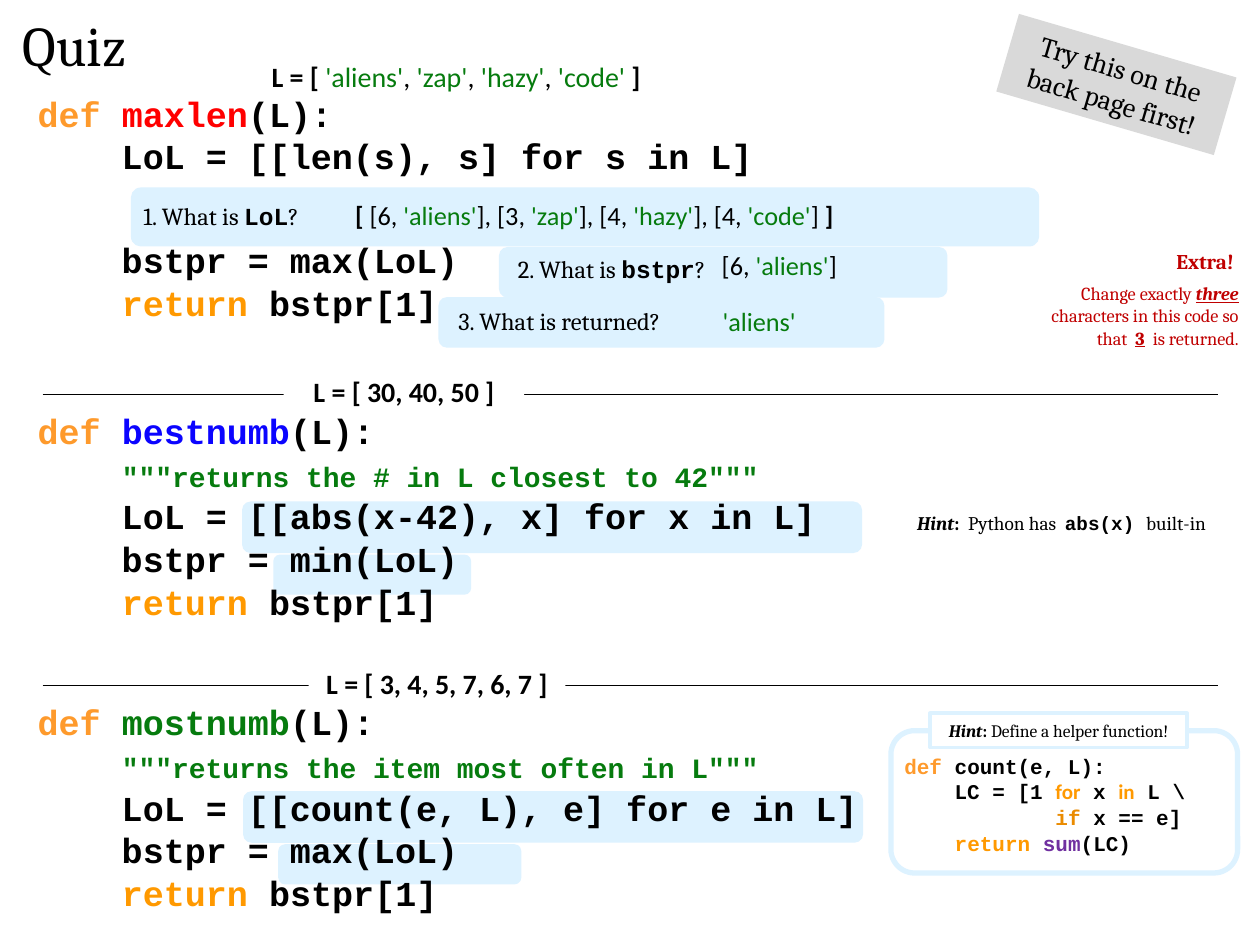
from lxml.etree import SubElement
from pptx import Presentation
from pptx.dml.color import RGBColor
from pptx.enum.shapes import MSO_CONNECTOR, MSO_SHAPE
from pptx.enum.text import MSO_ANCHOR, MSO_AUTO_SIZE, PP_ALIGN
from pptx.oxml.ns import qn
from pptx.util import Cm, Pt

BLACK, WHITE, PALE_BLUE, GRAY = "000000", "FFFFFF", "DDF2FF", "D9D9D9"
DEF_ORANGE, ORANGE, DARK_ORANGE = "FE9A2C", "FF9900", "EA8B00"
RED, BLUE, GREEN, PURPLE, CRIMSON = "FF0000", "0B04FF", "067B0E", "7030A0", "C00000"
SERIF, SANS, MONO = "Cambria", "Calibri", "Courier New"
LEFT, CENTER, RIGHT = PP_ALIGN.LEFT, PP_ALIGN.CENTER, PP_ALIGN.RIGHT


def rgb(color):
    return RGBColor.from_string(color)


def run(text, **style):
    return text, style


def add_run(paragraph, text, font=SERIF, size=16, color=BLACK, bold=False, italic=False, underline=False):
    piece = paragraph.add_run()
    piece.text = text
    piece.font.name = font
    piece.font.size = Pt(size)
    piece.font.color.rgb = rgb(color)
    piece.font.bold = bold
    piece.font.italic = italic
    piece.font.underline = underline


def set_relative_space_before(paragraph, percent):
    paragraph.space_before = Pt(0)
    spacing = paragraph._p.get_or_add_pPr().find(qn("a:spcBef"))
    for child in list(spacing):
        spacing.remove(child)
    SubElement(spacing, qn("a:spcPct")).set("val", str(percent * 1000))


def write_text(shape, lines, align=LEFT, line_spacing=1.0, before=50, wrap=True, **style):
    frame = shape.text_frame
    frame.word_wrap = wrap
    frame.auto_size = MSO_AUTO_SIZE.SHAPE_TO_FIT_TEXT
    for index, line in enumerate(lines):
        paragraph = frame.add_paragraph() if index else frame.paragraphs[0]
        paragraph.alignment = align
        paragraph.line_spacing = line_spacing
        set_relative_space_before(paragraph, before)
        for text, changes in line:
            add_run(paragraph, text, **{**style, **changes})
    return frame.paragraphs


def add_text(slide, box, lines, **style):
    shape = slide.shapes.add_textbox(*map(Cm, box))
    return write_text(shape, lines, **style)


def add_panel(slide, box, fill=None, line=None, line_width=1, kind=MSO_SHAPE.RECTANGLE):
    shape = slide.shapes.add_shape(kind, *map(Cm, box))
    shape.shadow.inherit = False
    if fill:
        shape.fill.solid()
        shape.fill.fore_color.rgb = rgb(fill)
    else:
        shape.fill.background()
    if line:
        shape.line.color.rgb = rgb(line)
        shape.line.width = Pt(line_width)
    else:
        shape.line.fill.background()
    return shape


def add_divider(slide, top, label, label_box):
    line = slide.shapes.add_connector(MSO_CONNECTOR.STRAIGHT, Cm(0.86), Cm(top), Cm(24.56), Cm(top))
    line.line.color.rgb = rgb(BLACK)
    line.line.width = Pt(0.75)
    SubElement(line._element.spPr, qn("a:effectLst"))
    panel = add_panel(slide, label_box, fill=WHITE)
    write_text(panel, [[run(label)]], align=CENTER, before=0, font=SANS, bold=True)


def quoted_runs(text):
    return [run(part, color=GREEN if "'" in part else BLACK) for part in split_quotes(text)]


def split_quotes(text):
    parts = text.split("'")
    quoted = [f"'{part}'" if index % 2 else part for index, part in enumerate(parts)]
    return [part for part in quoted if part]


def add_code(slide, box, name, color, body, docstring=None):
    lines = [[run("def ", color=DEF_ORANGE), run(name, color=color), run("(L):")]]
    if docstring:
        lines.append([run("    "), run(f'"""{docstring}"""', size=16, color=GREEN)])
    lines += [[run("    " + statement)] for statement in body]
    lines.append([run("    "), run("return ", color=ORANGE), run("bstpr[1]")])
    return add_text(slide, box, lines, line_spacing=0.6, font=MONO, size=20, bold=True)


def add_question(slide, box, pieces, wrap=False):
    add_text(slide, box, [pieces], line_spacing=0.6, wrap=wrap, size=14)


def add_answer(slide, box, pieces, align=CENTER):
    add_text(slide, box, [pieces], align=align, before=0, wrap=False, font=SANS, size=15)


def add_title(slide):
    title = slide.shapes.title
    title.left, title.top, title.width, title.height = map(Cm, (0.2, 0.08, 3.3, 1.63))
    title.text_frame.vertical_anchor = MSO_ANCHOR.TOP
    write_text(title, [[run("Quiz")]], size=32)


def add_highlights(slide):
    for box in [
        (4.9, 15.95, 12.5, 1.04), (5.61, 17.02, 4.9, 0.81),
        (4.88, 10.11, 12.5, 1.04), (5.51, 11.18, 3.99, 0.81),
        (8.84, 5.99, 8.99, 1.02), (10.06, 4.98, 9.04, 1.02),
        (2.64, 3.78, 18.31, 1.19),
    ]:
        add_panel(slide, box, fill=PALE_BLUE, kind=MSO_SHAPE.ROUNDED_RECTANGLE)


def add_maxlen(slide):
    code = add_code(slide, (0.51, 2.03, 17.98, 4.9), "maxlen", RED,
                    ["LoL = [[len(s), s] for s in L]", "bstpr = max(LoL)"])
    code[2].space_before = Pt(45)
    words = quoted_runs("'aliens', 'zap', 'hazy', 'code'")
    add_text(slide, (5.18, 1.07, 8.03, 0.94),
             [[run("L = [ ", bold=True), *words, run(" ]", bold=True)]],
             align=CENTER, before=0, font=SANS)
    add_question(slide, (2.64, 4.14, 3.99, 0.61),
                 [run("1. What is "), run("LoL", font=MONO, bold=True), run("?")], wrap=True)
    add_question(slide, (10.19, 5.21, 4.42, 0.61),
                 [run("2. What is "), run("bstpr", font=MONO, bold=True), run("?")])
    add_question(slide, (8.99, 6.25, 4.83, 0.61), [run("3. What is returned?")])
    pairs = quoted_runs("[6, 'aliens'], [3, 'zap'], [4, 'hazy'], [4, 'code'] ")
    add_answer(slide, (6.86, 3.89, 10.24, 0.89),
               [run("[ ", bold=True), *pairs, run("]", bold=True)])
    add_answer(slide, (14.3, 4.9, 2.87, 0.89), quoted_runs("[6, 'aliens']"), align=LEFT)
    add_answer(slide, (14.3, 6.02, 2.01, 0.89), quoted_runs("'aliens'"))
    add_text(slide, (20.75, 4.88, 4.47, 2.34), [
        [run("Extra! ", size=12, bold=True)],
        [run("Change exactly "), run("three", bold=True, italic=True, underline=True),
         run(" characters in this code so that  "), run("3", bold=True, underline=True),
         run("  is returned.")],
    ], align=RIGHT, size=10.5, color=CRIMSON)


def add_bestnumb(slide):
    add_code(slide, (0.51, 8.43, 22.96, 4.52), "bestnumb", BLUE,
             ["LoL = [[abs(x-42), x] for x in L]", "bstpr = min(LoL)"],
             docstring="returns the # in L closest to 42")
    add_text(slide, (18.11, 10.19, 6.58, 0.74), [[
        run("Hint", bold=True, italic=True), run(":", bold=True), run("  Python has  "),
        run("abs(x) ", font=MONO, bold=True), run("built-in"),
    ]], align=CENTER, size=11)


def add_mostnumb(slide):
    add_code(slide, (0.51, 14.3, 20.62, 4.52), "mostnumb", GREEN,
             ["LoL = [[count(e, L), e] for e in L]", "bstpr = max(LoL)"],
             docstring="returns the item most often in L")
    add_panel(slide, (17.96, 14.73, 6.99, 2.87), line=PALE_BLUE, line_width=3,
              kind=MSO_SHAPE.ROUNDED_RECTANGLE)
    hint = add_panel(slide, (18.75, 14.38, 5.18, 0.69), fill=WHITE, line=PALE_BLUE, line_width=2.25)
    write_text(hint, [[run("Hint", bold=True, italic=True), run(":", bold=True),
                       run(" Define a helper function!")]], align=CENTER, size=10)
    add_text(slide, (17.98, 15.24, 6.93, 2.26), [
        [run("def ", color=DEF_ORANGE), run("count(e, L):")],
        [run("    LC = [1 "), run("for", font=SANS, color=ORANGE), run(" x "),
         run("in", font=SANS, color=ORANGE), run(" L \\")],
        [run("            "), run("if", color=DARK_ORANGE), run(" x == e]")],
        [run("    "), run("return ", color=ORANGE), run("sum", color=PURPLE), run("(LC)")],
    ], line_spacing=0.6, font=MONO, size=12, bold=True)


def add_reminder(slide):
    reminder = add_panel(slide, (20.22, 0.89, 4.57, 1.63), fill=GRAY)
    reminder.rotation = 16.3
    write_text(reminder, [[run("Try this on the back page first!")]], align=CENTER)


def main():
    presentation = Presentation()
    presentation.slide_width, presentation.slide_height = Cm(25.4), Cm(19.05)
    slide = presentation.slides.add_slide(presentation.slide_layouts[5])
    add_highlights(slide)
    add_title(slide)
    add_maxlen(slide)
    add_bestnumb(slide)
    add_mostnumb(slide)
    add_reminder(slide)
    add_divider(slide, 13.82, "L = [ 3, 4, 5, 7, 6, 7 ]", (6.22, 13.31, 5.18, 0.94))
    add_divider(slide, 7.95, "L = [ 30, 40, 50 ]", (5.72, 7.42, 4.85, 0.94))
    presentation.save("out.pptx")


if __name__ == "__main__":
    main()
